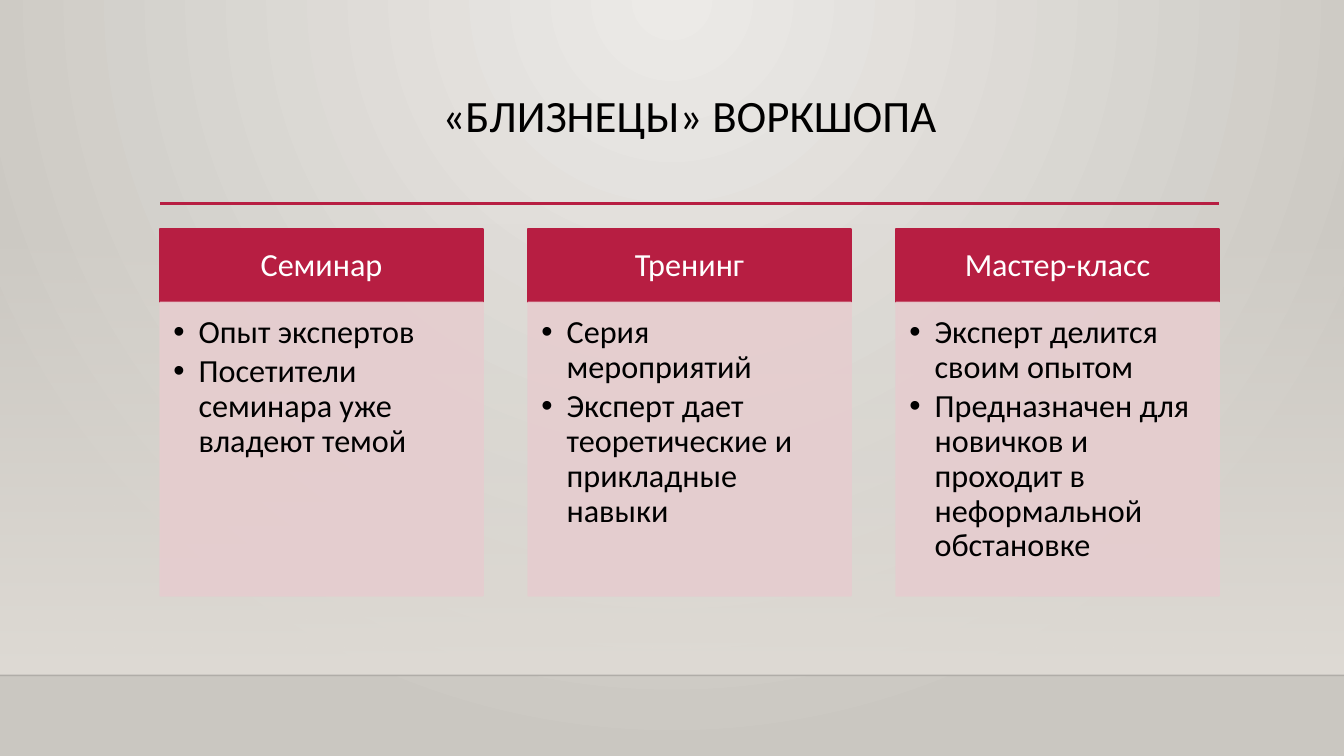
"""Build a slide that compares three relatives of the workshop format."""
import pptx
import pptx.util
import pptx.oxml
import pptx.oxml.ns
import pptx.dml.color
import pptx.enum.shapes
import pptx.enum.text
from lxml import etree

RGB = pptx.dml.color.RGBColor
RED = RGB(0xB7, 0x1E, 0x42)
PINK = RGB(0xE6, 0xCD, 0xCF)
SAND = RGB(0xDF, 0xDB, 0xD5)
LIGHT = RGB(0xEC, 0xEA, 0xE7)
GREY = RGB(0xCA, 0xC7, 0xC1)
BLACK = RGB(0, 0, 0)
WHITE = RGB(0xFF, 0xFF, 0xFF)

WIDE, HIGH = 13.33, 7.5
LEFT, COL, STEP = 1.59, 3.2, 3.65
TOP, HEAD, BODY = 2.27, 0.73, 2.91
FLOOR = 6.7
RULE = 2.02

ALIGN = pptx.enum.text.PP_ALIGN
ANCHOR = pptx.enum.text.MSO_ANCHOR
INCH = pptx.util.Inches
TAG = pptx.oxml.ns.qn

CARDS = [
    ("Семинар", ["Опыт экспертов", "Посетители семинара уже владеют темой"]),
    ("Тренинг", ["Серия мероприятий",
                 "Эксперт дает теоретические и прикладные навыки"]),
    ("Мастер-класс", ["Эксперт делится своим опытом",
                      "Предназначен для новичков и проходит в неформальной обстановке"]),
]


def fade(node, share):
    """Set the opacity of a colour node in percent."""
    etree.SubElement(node, TAG("a:alpha")).set("val", str(share * 1000))


def blend(fill, first, last):
    """Give a fill a gradient of two colours."""
    fill.gradient()
    for stop, tone in zip(fill.gradient_stops, (first, last)):
        stop.color.rgb = tone


def paint(slide):
    """Fill the slide with a round gradient centred at the top."""
    blend(slide.background.fill, LIGHT, GREY)
    grad = next(slide.element.iter(TAG("a:gradFill")))
    for line in grad.findall(TAG("a:lin")):
        grad.remove(line)
    ring = etree.SubElement(grad, TAG("a:path"), path="circle")
    etree.SubElement(ring, TAG("a:fillToRect"), l="43000", t="0", r="43000", b="100000")


def block(slide, x, y, w, h):
    """Add a plain rectangle."""
    kind = pptx.enum.shapes.MSO_SHAPE.RECTANGLE
    shape = slide.shapes.add_shape(kind, INCH(x), INCH(y), INCH(w), INCH(h))
    shape.shadow.inherit = False
    return shape


def wall(slide):
    """Add the band that fades in down to the floor."""
    shape = block(slide, 0, RULE + 0.19, WIDE, FLOOR - RULE - 0.19)
    blend(shape.fill, SAND, SAND)
    shape.fill.gradient_angle = 270
    fade(next(shape.element.iter(TAG("a:srgbClr"))), 0)
    shape.line.fill.background()


def rule(slide, x, y, w, tone, size, share=100):
    """Add a level line."""
    kind = pptx.enum.shapes.MSO_CONNECTOR.STRAIGHT
    line = slide.shapes.add_connector(kind, INCH(x), INCH(y), INCH(x + w), INCH(y))
    line.line.color.rgb = tone
    line.line.width = pptx.util.Pt(size)
    etree.SubElement(line.element.spPr, TAG("a:effectLst"))
    if share < 100:
        fade(next(line.element.iter(TAG("a:srgbClr"))), share)


def write(shape, lines, size, tone, align, anchor, inset, dots=False):
    """Write paragraphs into a shape, with bullets if asked."""
    frame = shape.text_frame
    frame.word_wrap = True
    frame.vertical_anchor = anchor
    (frame.margin_left, frame.margin_top,
     frame.margin_right, frame.margin_bottom) = map(INCH, inset)
    for spot, text in enumerate(lines):
        para = frame.add_paragraph() if spot else frame.paragraphs[0]
        para.alignment = align
        para.line_spacing = 0.9
        if dots:
            para.space_after = pptx.util.Pt(3.5)
            props = para._p.get_or_add_pPr()
            props.set("marL", str(INCH(0.25)))
            props.set("indent", str(INCH(-0.25)))
            etree.SubElement(props, TAG("a:buFont"), typeface="Arial")
            etree.SubElement(props, TAG("a:buChar"), char="•")
        run = para.add_run()
        run.text = text
        run.font.name = "Calibri"
        run.font.size = pptx.util.Pt(size)
        run.font.color.rgb = tone


def panel(slide, x, y, h, tone, share=100):
    """Add one filled part of a card."""
    shape = block(slide, x, y, COL, h)
    shape.fill.solid()
    shape.fill.fore_color.rgb = tone
    shape.line.color.rgb = tone
    shape.line.width = pptx.util.Pt(1.25)
    if share < 100:
        for node in shape.element.iter(TAG("a:srgbClr")):
            fade(node, share)
    return shape


def card(slide, x, name, points):
    """Add a card with a heading and a bullet list."""
    head = panel(slide, x, TOP, HEAD, RED)
    write(head, [name], 23, WHITE, ALIGN.CENTER, ANCHOR.MIDDLE, (0.18, 0.1, 0.18, 0.1))
    body = panel(slide, x, TOP + HEAD, BODY, PINK, 90)
    write(body, points, 23, BLACK, ALIGN.LEFT, ANCHOR.TOP, (0.13, 0.13, 0.18, 0.2), True)


def main():
    """Build and save the slide."""
    deck = pptx.Presentation()
    deck.slide_width, deck.slide_height = INCH(WIDE), INCH(HIGH)
    slide = deck.slides.add_slide(deck.slide_layouts[6])
    paint(slide)
    wall(slide)
    rule(slide, 0, FLOOR, WIDE, BLACK, 1, 20)
    span = 2 * STEP + COL
    rule(slide, LEFT, RULE, span, RED, 2.5)
    title = slide.shapes.add_textbox(INCH(LEFT), INCH(0.88), INCH(span), INCH(1.15))
    write(title, ["«БЛИЗНЕЦЫ» ВОРКШОПА"], 32, BLACK, ALIGN.CENTER, ANCHOR.TOP,
          (0.1, 0.05, 0.1, 0.05))
    for spot, (name, points) in enumerate(CARDS):
        card(slide, LEFT + spot * STEP, name, points)
    deck.save("out.pptx")


if __name__ == "__main__":
    main()
